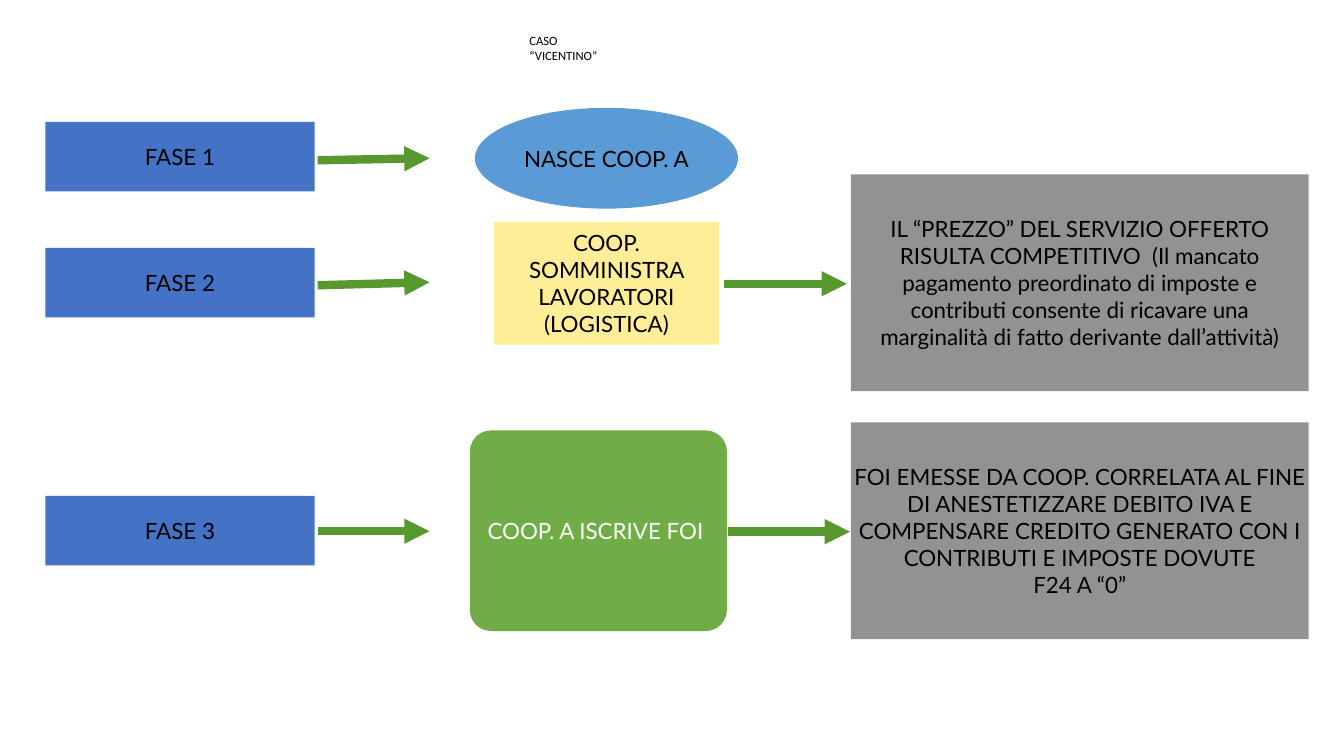
from dataclasses import dataclass

from lxml.etree import SubElement
from pptx import Presentation
from pptx.dml.color import RGBColor
from pptx.enum.shapes import MSO_CONNECTOR, MSO_SHAPE
from pptx.enum.text import MSO_ANCHOR, MSO_AUTO_SIZE, PP_ALIGN
from pptx.oxml.ns import qn
from pptx.util import Inches, Pt


@dataclass(frozen=True)
class Theme:
    """Colours, fonts and sizes of the slide."""
    phase: str = "4472C4"
    birth: str = "5B9BD5"
    supply: str = "FFED97"
    invoices: str = "70AD47"
    outcome: str = "929292"
    arrow: str = "57982F"
    dark: str = "000000"
    light: str = "FFFFFF"
    title_font: str = "Calibri"
    body_font: str = "Lato"
    title_size: int = 9
    body_size: int = 16
    arrow_width: int = 6
    inset: float = 0.03


THEME = Theme()
PHASE_LEFT, PHASE_WIDTH, PHASE_HEIGHT = 0.45, 2.67, 0.69
OUTCOME_LEFT, OUTCOME_WIDTH, OUTCOME_HEIGHT = 8.44, 4.54, 2.15


def write_text(shape, lines, font, size, color, alignment):
    """Fill a shape with formatted, vertically centred paragraphs."""
    frame = shape.text_frame
    frame.vertical_anchor = MSO_ANCHOR.MIDDLE
    frame.margin_left = frame.margin_right = Inches(THEME.inset)
    frame.margin_top = frame.margin_bottom = Inches(THEME.inset)
    frame.text = "\n".join(lines)
    for para in frame.paragraphs:
        para.alignment = alignment
        for span in para.runs:
            span.font.name = font
            span.font.size = Pt(size)
            span.font.color.rgb = RGBColor.from_string(color)


def add_title(page, box, text):
    """Add the small unwrapped title."""
    title = page.shapes.add_textbox(*map(Inches, box))
    write_text(title, [text], THEME.title_font, THEME.title_size, THEME.dark, PP_ALIGN.LEFT)
    title.text_frame.word_wrap = False
    title.text_frame.auto_size = MSO_AUTO_SIZE.SHAPE_TO_FIT_TEXT


def add_block(page, box, lines, fill, kind=MSO_SHAPE.RECTANGLE, color=THEME.dark):
    """Add a filled shape with centred text."""
    block = page.shapes.add_shape(kind, *map(Inches, box))
    block.shadow.inherit = False
    block.fill.solid()
    block.fill.fore_color.rgb = RGBColor.from_string(fill)
    block.line.fill.background()
    write_text(block, lines, THEME.body_font, THEME.body_size, color, PP_ALIGN.CENTER)
    block.text_frame.word_wrap = True
    return block


def add_arrow(page, start, end):
    """Add a thick arrow between two points."""
    arrow = page.shapes.add_connector(MSO_CONNECTOR.STRAIGHT, *map(Inches, start + end))
    arrow.line.color.rgb = RGBColor.from_string(THEME.arrow)
    arrow.line.width = Pt(THEME.arrow_width)
    SubElement(arrow.line._get_or_add_ln(), qn("a:tailEnd"), type="triangle")
    SubElement(arrow._element.spPr, qn("a:effectLst"))


def add_phase(page, number, top, arrow_start, arrow_end):
    """Add a phase label and the arrow on its right."""
    box = (PHASE_LEFT, top, PHASE_WIDTH, PHASE_HEIGHT)
    add_block(page, box, [f"FASE {number}"], THEME.phase)
    right = PHASE_LEFT + PHASE_WIDTH
    add_arrow(page, (right + 0.03, top + arrow_start), (right + 1.14, top + arrow_end))


def add_outcome(page, top, lines, arrow_start, arrow_end):
    """Add an outcome panel and the level arrow that leads to it."""
    add_block(page, (OUTCOME_LEFT, top, OUTCOME_WIDTH, OUTCOME_HEIGHT), lines, THEME.outcome)
    middle = top + OUTCOME_HEIGHT / 2 + 0.01
    add_arrow(page, (arrow_start, middle), (arrow_end, middle))


def add_steps(page):
    """Add the middle column of steps."""
    add_block(page, (4.71, 1.07, 2.61, 1), ["NASCE COOP. A"], THEME.birth, MSO_SHAPE.OVAL)
    add_block(page, (4.9, 2.2, 2.23, 1.22),
              ["COOP. SOMMINISTRA LAVORATORI", "(LOGISTICA)"], THEME.supply)
    invoices = add_block(page, (4.66, 4.27, 2.55, 1.99), ["COOP. A ISCRIVE FOI "],
                         THEME.invoices, MSO_SHAPE.ROUNDED_RECTANGLE, THEME.light)
    invoices.adjustments[0] = 0.105


def main():
    """Build and save the slide."""
    deck = Presentation()
    deck.slide_width, deck.slide_height = Inches(13.33), Inches(7.5)
    page = deck.slides.add_slide(deck.slide_layouts[6])
    add_title(page, (5.22, 0.37, 1.04, 0.21), "CASO “VICENTINO”")
    phases = [(1.21, 0.38, 0.36), (2.46, 0.37, 0.34), (4.92, 0.35, 0.35)]
    for number, phase in enumerate(phases, 1):
        add_phase(page, number, *phase)
    add_steps(page)
    add_outcome(page, 1.73, [
        "IL “PREZZO” DEL SERVIZIO OFFERTO RISULTA COMPETITIVO  (Il mancato pagamento "
        "preordinato di imposte e contributi consente di ricavare una marginalità "
        "di fatto derivante dall’attività)"], 7.18, 8.4)
    add_outcome(page, 4.19, [
        "FOI EMESSE DA COOP. CORRELATA AL FINE DI ANESTETIZZARE DEBITO IVA E "
        "COMPENSARE CREDITO GENERATO CON I CONTRIBUTI E IMPOSTE DOVUTE",
        "F24 A “0”"], 7.22, 8.43)
    deck.save("out.pptx")


if __name__ == "__main__":
    main()
